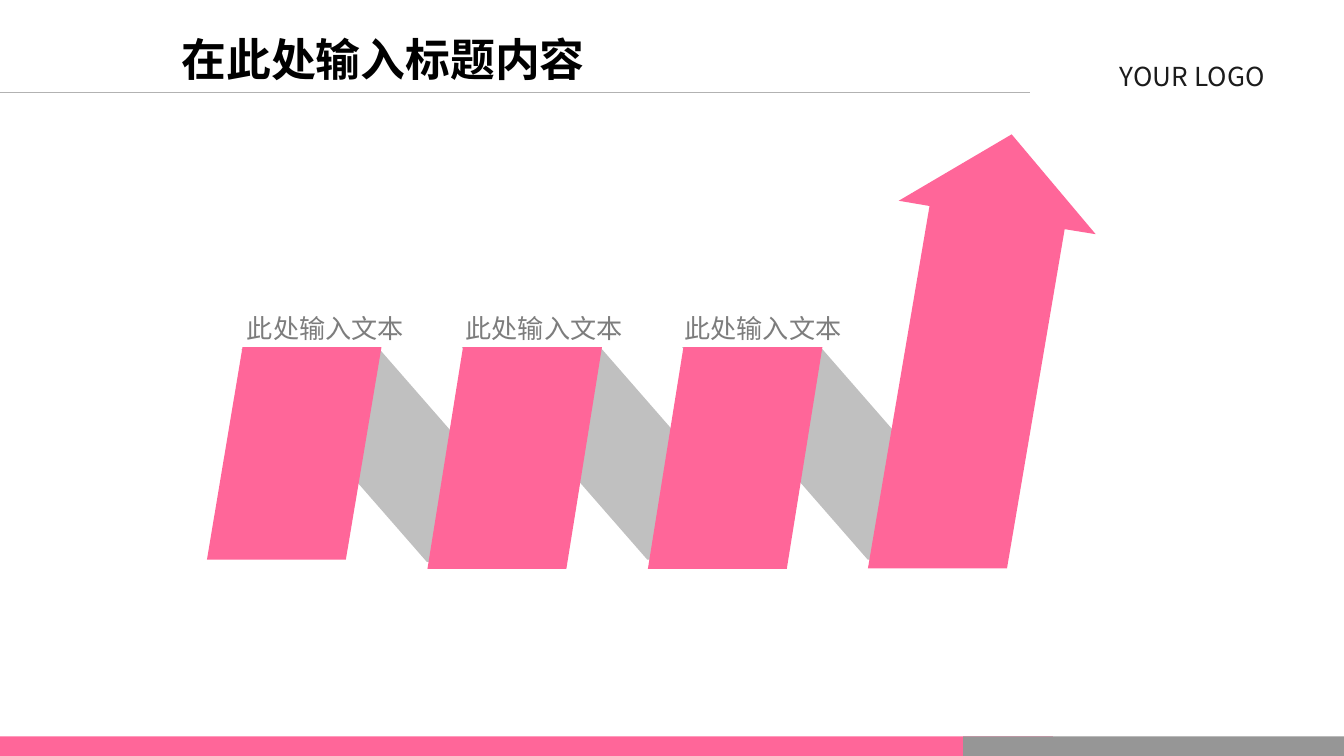
from dataclasses import dataclass

from lxml.etree import SubElement as add_node
from pptx import Presentation
from pptx.dml.color import RGBColor as Rgb
from pptx.enum.shapes import MSO_CONNECTOR as Link, MSO_SHAPE as Kind
from pptx.enum.text import MSO_AUTO_SIZE as Fit, PP_ALIGN as Align
from pptx.oxml.ns import qn
from pptx.util import Pt

HUES = {
    "pink": "FF6699",
    "silver": "C0C0C0",
    "gray": "969696",
    "rule": "B2B2B2",
    "black": "000000",
    "ink": "1C1C1C",
    "label": "7D7D7D",
}
SANS = "Noto Sans CJK SC"
STEP = 118.1  # gap between the left edges of neighbouring folds


@dataclass
class Block:
    left: float
    top: float
    width: float
    height: float
    hue: str
    kind: Kind = Kind.RECTANGLE
    slant: float = 0
    flip: bool = False


@dataclass
class Label:
    text: str
    left: float
    top: float
    width: float
    height: float
    hue: str
    size: float = 14
    face: str = SANS
    bold: bool = False
    align: Align = Align.CENTER
    wrap: bool = True


def tone(name: str) -> Rgb:
    return Rgb.from_string(HUES[name])


def paint(shape, hue: str) -> None:
    shape.shadow.inherit = False
    shape.fill.solid()
    shape.fill.fore_color.rgb = tone(hue)
    shape.line.fill.background()


def draw_block(slide, block: Block) -> None:
    shape = slide.shapes.add_shape(
        block.kind, Pt(block.left), Pt(block.top), Pt(block.width), Pt(block.height))
    if block.slant:
        shape.adjustments[0] = block.slant
    if block.flip:
        shape.element.spPr.find(qn("a:xfrm")).set("flipH", "1")
    paint(shape, block.hue)


def draw_label(slide, label: Label) -> None:
    box = slide.shapes.add_textbox(
        Pt(label.left), Pt(label.top), Pt(label.width), Pt(label.height))
    frame = box.text_frame
    frame.word_wrap = label.wrap
    frame.auto_size = Fit.SHAPE_TO_FIT_TEXT
    para = frame.paragraphs[0]
    para.alignment = label.align
    run = para.add_run()
    run.text = label.text
    style = {"size": Pt(label.size), "bold": label.bold, "name": label.face}
    for key, value in style.items():
        setattr(run.font, key, value)
    run.font.color.rgb = tone(label.hue)
    # Chinese glyphs take their own typeface
    add_node(run.font._element, qn("a:ea"), typeface=SANS)


def draw_rule(slide, y: float, end: float) -> None:
    rule = slide.shapes.add_connector(Link.STRAIGHT, Pt(0), Pt(y), Pt(end), Pt(y))
    rule.line.width = Pt(0.75)
    rule.line.color.rgb = tone("rule")
    add_node(rule.element.spPr, qn("a:effectLst"))


def draw_arrow(slide, points: list[tuple[float, float]], hue: str) -> None:
    start, *rest = [(Pt(x), Pt(y)) for x, y in points]
    form = slide.shapes.build_freeform(*start, scale=1.0)
    form.add_line_segments(rest, close=True)
    paint(form.convert_to_shape(), hue)


def main() -> None:
    deck = Presentation()
    deck.slide_width, deck.slide_height = Pt(720), Pt(405)
    slide = deck.slides.add_slide(deck.slide_layouts[6])

    # Header and footer
    draw_rule(slide, 49.6, 552)
    draw_label(slide, Label("YOUR LOGO", 563.8, 28.8, 149.8, 23.8, "ink"))
    draw_block(slide, Block(0, 394.5, 564, 10.5, "pink"))
    draw_block(slide, Block(516, 394.5, 204, 10.5, "gray"))
    draw_label(slide, Label("在此处输入标题内容", 66.2, 13.7, 278, 36, "black",
                            size=24, face="Times New Roman", bold=True))

    # Back folds of the ribbon
    for i in range(3):
        top = 186 if i else 187.2
        draw_block(slide, Block(129.3 + i * STEP, top, 173.5, 113.8, "silver",
                                Kind.PARALLELOGRAM, 0.873, flip=True))

    # Front folds with their labels
    for i in range(3):
        height = 118.8 if i else 113.8
        draw_block(slide, Block(110.9 + i * STEP, 186, 93.5, height, "pink",
                                Kind.PARALLELOGRAM, 0.204))
        draw_label(slide, Label("此处输入文本", 125.2 + i * 117.2, 164, 98.6, 23.8,
                                "label", align=Align.LEFT, wrap=False))

    # Rising arrow
    draw_arrow(slide, [(542, 72), (587, 125.5), (570.4, 122.8), (539.5, 304.5),
                       (465, 304.5), (498, 110.4), (481.5, 107.6)], "pink")

    deck.save("out.pptx")


if __name__ == "__main__":
    main()
